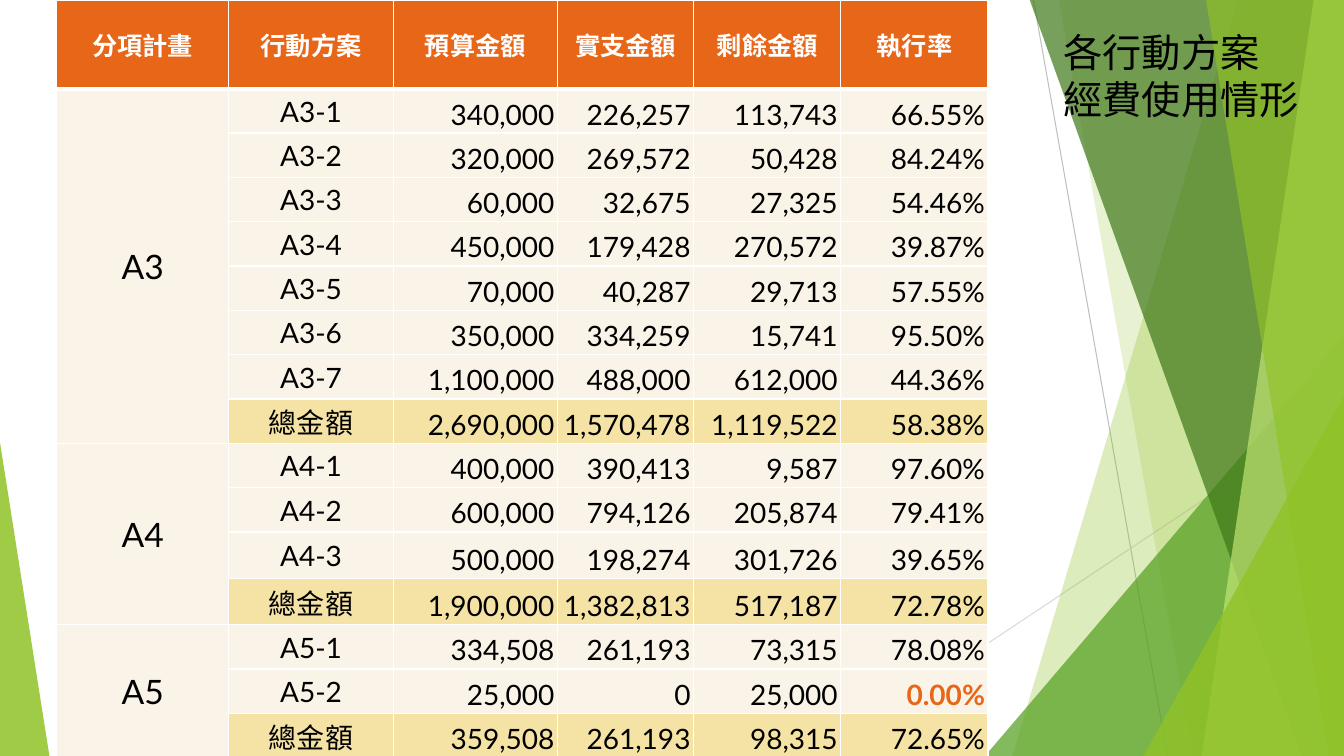
from dataclasses import dataclass
from typing import NamedTuple

from lxml.etree import SubElement
from pptx import Presentation
from pptx.dml.color import RGBColor
from pptx.enum.shapes import MSO_CONNECTOR, MSO_SHAPE
from pptx.enum.text import MSO_ANCHOR, MSO_AUTO_SIZE, PP_ALIGN
from pptx.oxml.ns import qn
from pptx.shapes.autoshape import Shape
from pptx.slide import Slide
from pptx.table import _Cell
from pptx.text.text import _Paragraph
from pptx.util import Emu, Pt

PX = 9144
WIDTH, HEIGHT = 1333, 750
FONT = "Lato"

BLACK = RGBColor(0x00, 0x00, 0x00)
WHITE = RGBColor(0xFF, 0xFF, 0xFF)
ORANGE = RGBColor(0xE7, 0x66, 0x18)
CREAM = RGBColor(0xFA, 0xF3, 0xE8)
SAND = RGBColor(0xF5, 0xE3, 0xA5)
LIME = RGBColor(0x90, 0xC2, 0x26)
PALE = RGBColor(0xC0, 0xE4, 0x74)
GREEN = RGBColor(0x54, 0xA0, 0x21)
FOREST = RGBColor(0x3F, 0x78, 0x19)
SILVER = RGBColor(0xBF, 0xBF, 0xBF)
MIST = RGBColor(0xD9, 0xD9, 0xD9)


class Box(NamedTuple):
    left: int
    top: int
    width: int
    height: int


@dataclass
class Ray:
    start: tuple[int, int]
    end: tuple[int, int]
    color: RGBColor


@dataclass
class Shard:
    top: tuple[int, int]
    foot: tuple[int, int]
    color: RGBColor
    alpha: int


@dataclass
class Wedge:
    box: Box
    apex: int
    color: RGBColor
    alpha: int


@dataclass
class Group:
    name: str
    rows: list[tuple[str, ...]]


RAYS = [
    Ray((1025, 0), (1158, HEIGHT), SILVER),
    Ray((WIDTH, 403), (812, HEIGHT), MIST),
]
DECOR = [
    Shard((1228, WIDTH), (1004, WIDTH), LIME, 30),
    Shard((1050, WIDTH), (1183, WIDTH), LIME, 20),
    Wedge(Box(977, 333, 356, 417), 1, GREEN, 72),
    Shard((1021, WIDTH), (1291, WIDTH), FOREST, 70),
    Shard((1303, WIDTH), (1192, WIDTH), PALE, 70),
    Shard((1196, WIDTH), (1318, WIDTH), LIME, 65),
    Wedge(Box(1134, 393, 199, 357), 1, LIME, 80),
    Wedge(Box(0, 439, 49, 311), 0, LIME, 85),
]

TITLE = Box(1026, 23, 273, 104)
FRAME = Box(56, 0, 924, HEIGHT)
COLS = [171, 163, 163, 135, 146, 146]
ROWS = [88] + [44] * 10 + [46] * 2 + [44] * 3
HEAD = ["分項計畫", "行動方案", "預算金額", "實支金額", "剩餘金額", "執行率"]
GROUPS = [
    Group("A3", [
        ("A3-1", "340,000", "226,257", "113,743", "66.55%"),
        ("A3-2", "320,000", "269,572", "50,428", "84.24%"),
        ("A3-3", "60,000", "32,675", "27,325", "54.46%"),
        ("A3-4", "450,000", "179,428", "270,572", "39.87%"),
        ("A3-5", "70,000", "40,287", "29,713", "57.55%"),
        ("A3-6", "350,000", "334,259", "15,741", "95.50%"),
        ("A3-7", "1,100,000", "488,000", "612,000", "44.36%"),
        ("總金額", "2,690,000", "1,570,478", "1,119,522", "58.38%"),
    ]),
    Group("A4", [
        ("A4-1", "400,000", "390,413", "9,587", "97.60%"),
        ("A4-2", "600,000", "794,126", "205,874", "79.41%"),
        ("A4-3", "500,000", "198,274", "301,726", "39.65%"),
        ("總金額", "1,900,000", "1,382,813", "517,187", "72.78%"),
    ]),
    Group("A5", [
        ("A5-1", "334,508", "261,193", "73,315", "78.08%"),
        ("A5-2", "25,000", "0", "25,000", "0.00%"),
        ("總金額", "359,508", "261,193", "98,315", "72.65%"),
    ]),
]


def px(size: int) -> Emu:
    return Emu(size * PX)


def write(para: _Paragraph, text: str, *, size: int, color: RGBColor = BLACK,
          bold: bool = False, align: PP_ALIGN = PP_ALIGN.CENTER,
          indent: int = 0) -> None:
    run = para.add_run()
    run.text = text
    run.font.name = FONT
    run.font.size = Pt(size)
    run.font.bold = bold
    run.font.color.rgb = color
    para.alignment = align
    if indent:
        para._p.get_or_add_pPr().set("marL", str(px(indent)))


def tint(shape: Shape, color: RGBColor, alpha: int) -> None:
    shape.shadow.inherit = False
    shape.fill.solid()
    shape.fill.fore_color.rgb = color
    shape.line.fill.background()
    tone = shape.element.spPr.find(qn("a:solidFill")).find(qn("a:srgbClr"))
    SubElement(tone, qn("a:alpha"), val=str(alpha * 1000))


def draw_ray(slide: Slide, ray: Ray) -> None:
    line = slide.shapes.add_connector(
        MSO_CONNECTOR.STRAIGHT, *map(px, ray.start + ray.end))
    line.line.color.rgb = ray.color
    line.line.width = Pt(0.75)
    SubElement(line.element.spPr, qn("a:effectLst"))


def draw_shard(slide: Slide, shard: Shard) -> None:
    left, right = shard.top
    toe, heel = shard.foot
    path = slide.shapes.build_freeform(left, -1, scale=PX)
    path.add_line_segments([(right, -1), (heel, HEIGHT), (toe, HEIGHT)])
    tint(path.convert_to_shape(), shard.color, shard.alpha)


def draw_wedge(slide: Slide, wedge: Wedge) -> None:
    shape = slide.shapes.add_shape(
        MSO_SHAPE.ISOSCELES_TRIANGLE, *map(px, wedge.box))
    shape.adjustments[0] = wedge.apex
    tint(shape, wedge.color, wedge.alpha)


def edge(cell: _Cell, top: int, foot: int) -> None:
    props = cell._tc.get_or_add_tcPr()
    for side, width in (("L", 1), ("R", 1), ("T", top), ("B", foot)):
        line = SubElement(props, qn(f"a:ln{side}"), w=str(Pt(width)))
        fill = SubElement(line, qn("a:solidFill"))
        SubElement(fill, qn("a:srgbClr"), val=str(WHITE))


def fill_cell(cell: _Cell, text: str, fill: RGBColor, *, size: int = 20,
              color: RGBColor = BLACK, bold: bool = False,
              number: bool = False) -> None:
    cell.fill.solid()
    cell.fill.fore_color.rgb = fill
    side, top, foot = (3, 2, 2) if number else (1, 1, 0)
    cell.margin_left = cell.margin_right = px(side)
    cell.margin_top, cell.margin_bottom = px(top), px(foot)
    cell.vertical_anchor = MSO_ANCHOR.BOTTOM if number else MSO_ANCHOR.MIDDLE
    write(cell.text_frame.paragraphs[0], text, size=size, color=color, bold=bold,
          align=PP_ALIGN.RIGHT if number else PP_ALIGN.CENTER)


def draw_table(slide: Slide) -> None:
    table = slide.shapes.add_table(len(ROWS), len(COLS), *map(px, FRAME)).table
    table.horz_banding = False
    for col, width in zip(table.columns, COLS):
        col.width = px(width)
    for index, (row, height) in enumerate(zip(table.rows, ROWS)):
        row.height = px(height)
        for cell in row.cells:
            edge(cell, 3 if index == 1 else 1, 3 if index == 0 else 1)
    for col, text in enumerate(HEAD):
        fill_cell(table.cell(0, col), text, ORANGE, size=18, color=WHITE, bold=True)
    first = 1
    for group in GROUPS:
        last = first + len(group.rows) - 1
        table.cell(first, 0).merge(table.cell(last, 0))
        fill_cell(table.cell(first, 0), group.name, CREAM, size=24)
        for index, row in enumerate(group.rows, first):
            fill = SAND if index == last else CREAM
            for col, text in enumerate(row, 1):
                zero = text == "0.00%"
                fill_cell(table.cell(index, col), text, fill, number=col > 1,
                          color=ORANGE if zero else BLACK, bold=zero)
        first = last + 1


def draw_title(slide: Slide) -> None:
    title = slide.shapes.title
    title.left, title.top, title.width, title.height = map(px, TITLE)
    frame = title.text_frame
    frame.word_wrap = True
    frame.auto_size = MSO_AUTO_SIZE.SHAPE_TO_FIT_TEXT
    frame.vertical_anchor = MSO_ANCHOR.TOP
    write(frame.paragraphs[0], "各行動方案", size=28, align=PP_ALIGN.LEFT, indent=19)
    write(frame.add_paragraph(), "經費使用情形", size=28, align=PP_ALIGN.LEFT)
    slide.shapes._spTree.append(title.element)


def main() -> None:
    deck = Presentation()
    deck.slide_width, deck.slide_height = px(WIDTH), px(HEIGHT)
    slide = deck.slides.add_slide(deck.slide_layouts[5])
    for ray in RAYS:
        draw_ray(slide, ray)
    for item in DECOR:
        if isinstance(item, Shard):
            draw_shard(slide, item)
        else:
            draw_wedge(slide, item)
    draw_table(slide)
    draw_title(slide)
    deck.save("out.pptx")


if __name__ == "__main__":
    main()
